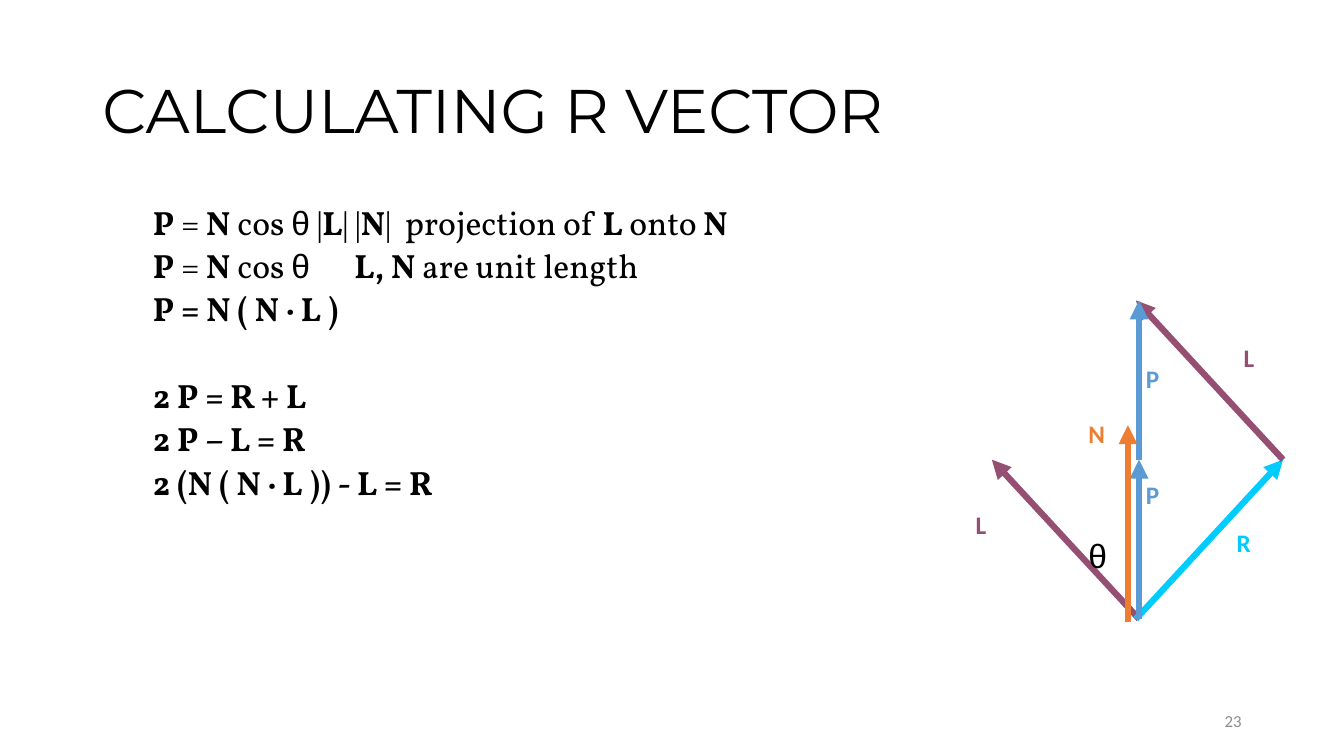
"""Builds a slide that derives the reflection vector R from L and N."""
from dataclasses import dataclass
from lxml.etree import SubElement as Sub
from pptx import Presentation
from pptx.dml.color import RGBColor as RGB
from pptx.enum.shapes import MSO_CONNECTOR as Conn
from pptx.enum.text import MSO_ANCHOR as Anchor, MSO_AUTO_SIZE as Fit, PP_ALIGN as Align
from pptx.oxml.ns import qn
from pptx.util import Pt


@dataclass(frozen=True)
class Theme:
    ink: str = "000000"
    grey: str = "8C8C8C"
    plum: str = "954F72"
    cyan: str = "00CCFF"
    blue: str = "5B9BD5"
    rust: str = "ED7D31"
    head: str = "Montserrat"
    text: str = "Vollkorn"
    tag: str = "Calibri"
    greek: str = "Arial"
    big: int = 44
    mid: int = 24
    small: int = 18
    tiny: int = 12
    line: float = 4.5


class Deck:
    def __init__(self, theme):
        self.look = theme
        self.prs = Presentation()
        self.prs.slide_width, self.prs.slide_height = Pt(960), Pt(540)
        self.slide = self.prs.slides.add_slide(self.prs.slide_layouts[1])

    def place(self, shape, left, top, width, height):
        shape.left, shape.top = Pt(left), Pt(top)
        shape.width, shape.height = Pt(width), Pt(height)

    def font(self, item, face, size, tint, bold=None):
        font = item.font
        font.name, font.size, font.bold = face, Pt(size), bold
        font.color.rgb = RGB.from_string(tint)

    def title(self, words, *box):
        shape = self.slide.shapes.title
        self.place(shape, *box)
        frame = shape.text_frame
        frame.text = words
        frame.auto_size, frame.vertical_anchor = Fit.NONE, Anchor.MIDDLE
        para = frame.paragraphs[0]
        para.alignment, para.line_spacing = Align.LEFT, 0.9
        self.font(para, self.look.head, self.look.big, self.look.ink)

    def body(self, rows, inset, stop, *box):
        shape = self.slide.placeholders[1]
        self.place(shape, *box)
        frame = shape.text_frame
        frame.auto_size, frame.vertical_anchor = Fit.NONE, Anchor.TOP
        frame.margin_left = Pt(inset)
        for i, (gap, words) in enumerate(rows):
            para = frame.add_paragraph() if i else frame.paragraphs[0]
            para.line_spacing, para.space_before = 0.9, Pt(gap)
            props = para._p.get_or_add_pPr()
            props.set("marL", "0")
            props.set("indent", "0")
            Sub(props, qn("a:buNone"))
            tabs = Sub(props, qn("a:tabLst"))
            Sub(tabs, qn("a:tab"), pos=str(Pt(stop)), algn="l")
            self.font(para, self.look.text, self.look.mid, self.look.ink)
            self.runs(para, words)

    def runs(self, para, words):
        for i, part in enumerate(words.split("*")):
            for piece in part.replace("θ", "*θ*").split("*"):
                if piece:
                    run = para.add_run()
                    run.text, run.font.bold = piece, i % 2 == 1
                    if piece == "θ":
                        run.font.name = self.look.greek

    def label(self, words, left, top, tint, face, size, bold=True):
        shape = self.slide.shapes.add_textbox(Pt(left), Pt(top), Pt(25), Pt(size * 1.6))
        frame = shape.text_frame
        frame.word_wrap, frame.text = False, words
        self.font(frame.paragraphs[0], face, size, tint, bold)

    def number(self, words, *box):
        shape = self.slide.shapes.add_textbox(*map(Pt, box))
        frame = shape.text_frame
        frame.word_wrap, frame.vertical_anchor = True, Anchor.MIDDLE
        frame.text = words
        para = frame.paragraphs[0]
        para.alignment = Align.RIGHT
        self.font(para, self.look.tag, self.look.tiny, self.look.grey)

    def arrow(self, start, end, tint):
        link = self.slide.shapes.add_connector(Conn.STRAIGHT, *map(Pt, start + end))
        link.line.width = Pt(self.look.line)
        link.line.color.rgb = RGB.from_string(tint)
        Sub(link.line._get_or_add_ln(), qn("a:tailEnd"), type="triangle")
        Sub(link._element.spPr, qn("a:effectLst"))


def main():
    look = Theme()
    deck = Deck(look)
    deck.title("CALCULATING R VECTOR", 66, 28.75, 828, 104.4)
    rows = [
        (5, "*P* = *N* cos θ |*L*| |*N*|\tprojection of *L* onto *N*"),
        (5, "*P* = *N* cos θ\t*L, N* are unit length"),
        (5, "*P = N ( N · L )*"),
        (36, "*2 P = R + L*"),
        (5, "*2 P – L = R*"),
        (5, "*2 (N ( N · L )) - L = R*"),
    ]
    deck.body(rows, 43.2, 253.4, 66, 143.75, 828, 342.7)
    deck.number("23", 678, 500.5, 216, 28.75)

    mid, side, rise = 813.6, 105.1, 113.75
    base, right = 442.1, 811.4
    half, peak = base - rise, base - 2 * rise
    for start, end, tint in (
        ((mid, base), (mid - side, half), look.plum),
        ((right, base), (right + side, half), look.cyan),
        ((right + side, half), (right, peak), look.plum),
        ((mid, base), (mid, half), look.blue),
        ((mid, half), (mid, peak), look.blue),
        ((805.7, 444.2), (805.7, 303.8), look.rust),
    ):
        deck.arrow(start, end, tint)

    for words, left, top, tint in (
        ("L", 689.8, 360, look.plum),
        ("P", 811.4, 339.1, look.blue),
        ("P", 811.4, 256.3, look.blue),
        ("R", 876.2, 373, look.cyan),
        ("L", 881.3, 241.2, look.plum),
        ("N", 770.4, 295.2, look.rust),
    ):
        deck.label(words, left, top, tint, look.tag, look.small)
    deck.label("θ", 770.4, 378.7, look.ink, look.greek, look.mid, False)
    deck.prs.save("out.pptx")


if __name__ == "__main__":
    main()
